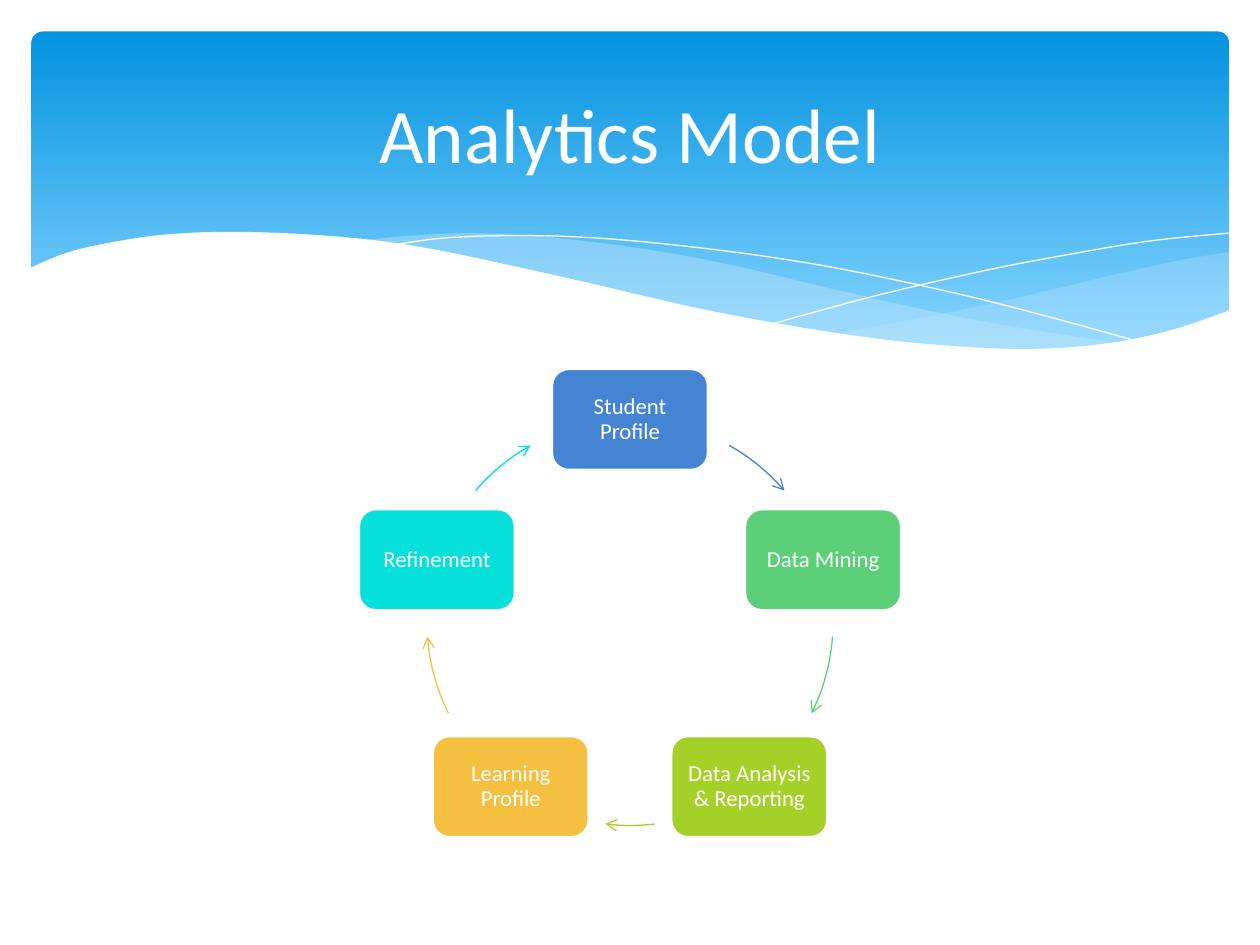
from math import cos, radians, sin

from lxml import etree
from pptx import Presentation
from pptx.dml.color import RGBColor
from pptx.enum.shapes import MSO_SHAPE
from pptx.enum.text import MSO_ANCHOR, PP_ALIGN
from pptx.oxml.ns import qn
from pptx.util import Pt

COLORS = {
    "white": "FFFFFF", "sky_top": "0293E0", "sky_bottom": "83D3FE", "mist": "C6E7FC",
    "blue": "4584D3", "green": "5BD078", "lime": "A5D028", "gold": "F5C040", "cyan": "05E0DB",
}
FONT = "Calibri"
TITLE = "Analytics Model"
STAGES = [
    ("Student Profile", "blue", (29.3, 49.5)),
    ("Data Mining", "green", (94, 116.6)),
    ("Data Analysis & Reporting", "lime", (173, 187)),
    ("Learning Profile", "gold", (243.4, 266)),
    ("Refinement", "cyan", (310.5, 330.7)),
]
CENTER_X, CENTER_Y, RADIUS = 360, 355.7, 116
BOX_WIDTH, BOX_HEIGHT = 89, 57.6

RIGHT_WAVE = [
    [(476, 190.8), (525, 182), (579.6, 170.6), (630.7, 158.4), (673, 149), (702.7, 144)],
    [(702.7, 177.8), (668, 189.4), (628, 197.3), (586, 200), (536.4, 198), (476, 190.8)],
]
LEFT_WAVE = [
    [(206, 137.5), (236, 134.6), (273.6, 133.2), (318, 136), (370, 142.6), (420.5, 152),
     (481, 166.3), (558, 183), (643, 196.6)],
    [(643, 196.6), (610.6, 199.4), (556.6, 199.4), (489.6, 193), (420.5, 181.4),
     (323, 160), (276, 149), (246, 143.3), (206, 137.5)],
]
FALLING_LINE = [(222.5, 140.4), (254, 136), (299.5, 134.6), (352, 136.8), (419, 144),
                (479, 153.4), (547, 167.8), (598, 180.7), (653, 195.8)]
RISING_LINE = [(441.4, 185), (500.4, 169), (558.7, 155.5), (602, 147), (655, 138), (702, 133.2)]
WHITE_WAVE = [
    [(16.6, 153.4), (37.4, 144.7), (61, 139), (95, 134), (139, 132.5), (195, 135.4),
     (245, 142), (322, 158.4), (400, 176.4), (467, 188.6), (523, 196), (582.5, 199.4),
     (630, 196.6), (669.6, 188.6), (703.4, 177)],
    [(703.4, 237), (16.6, 237)],
]


def color(name):
    return RGBColor.from_string(COLORS[name])


def smooth(knots, steps=8):
    if len(knots) < 3:
        return knots
    padded = [knots[0], *knots, knots[-1]]
    curve = []
    for before, start, end, after in zip(padded, padded[1:], padded[2:], padded[3:]):
        for step in range(steps):
            t = step / steps
            curve.append(tuple(
                b + ((c - a) * t + (2 * a - 5 * b + 4 * c - d) * t ** 2
                     + (3 * b - a - 3 * c + d) * t ** 3) / 2
                for a, b, c, d in zip(before, start, end, after)))
    return curve + [knots[-1]]


def on_circle(angle):
    return (CENTER_X + RADIUS * sin(radians(angle)), CENTER_Y - RADIUS * cos(radians(angle)))


def add_outline(slide, points, closed):
    vertices = [(Pt(x), Pt(y)) for x, y in points]
    builder = slide.shapes.build_freeform(*vertices[0])
    builder.add_line_segments(vertices[1:], close=closed)
    shape = builder.convert_to_shape()
    shape.shadow.inherit = False
    return shape


def add_wave(slide, edges, fill, opacity=100):
    shape = add_outline(slide, [point for edge in edges for point in smooth(edge)], True)
    shape.line.fill.background()
    shape.fill.solid()
    shape.fill.fore_color.rgb = color(fill)
    if opacity < 100:
        rgb = shape.fill._xPr.find(f".//{qn('a:srgbClr')}")
        etree.SubElement(rgb, qn("a:alpha"), val=str(opacity * 1000))


def add_curve(slide, points, stroke, width, arrow=False):
    shape = add_outline(slide, points, False)
    shape.fill.background()
    shape.line.color.rgb = color(stroke)
    shape.line.width = Pt(width)
    if arrow:
        etree.SubElement(shape.line._get_or_add_ln(), qn("a:tailEnd"), type="arrow")


def format_text(text_frame, size):
    text_frame.word_wrap = True
    text_frame.vertical_anchor = MSO_ANCHOR.MIDDLE
    paragraph = text_frame.paragraphs[0]
    paragraph.alignment = PP_ALIGN.CENTER
    font = paragraph.runs[0].font
    font.name, font.size, font.color.rgb = FONT, Pt(size), color("white")
    return paragraph


def add_sky(slide):
    sky = slide.shapes.add_shape(
        MSO_SHAPE.ROUNDED_RECTANGLE, Pt(18), Pt(18), Pt(684.5), Pt(194.4))
    sky.adjustments[0] = 0.034
    sky.shadow.inherit = False
    sky.line.fill.background()
    sky.fill.gradient()
    sky.fill.gradient_angle = 270
    stops = zip(sky.fill.gradient_stops, (0, 0.9), ("sky_top", "sky_bottom"))
    for stop, position, name in stops:
        stop.position = position
        stop.color.rgb = color(name)


def add_stage(slide, label, fill, angle):
    x, y = on_circle(angle)
    box = slide.shapes.add_shape(
        MSO_SHAPE.ROUNDED_RECTANGLE, Pt(x - BOX_WIDTH / 2), Pt(y - BOX_HEIGHT / 2),
        Pt(BOX_WIDTH), Pt(BOX_HEIGHT))
    box.shadow.inherit = False
    box.fill.solid()
    box.fill.fore_color.rgb = color(fill)
    box.line.color.rgb = color("white")
    box.line.width = Pt(1.25)
    frame = box.text_frame
    frame.text = label
    frame.margin_left = frame.margin_right = frame.margin_top = frame.margin_bottom = Pt(3.6)
    format_text(frame, 13).line_spacing = 0.9


def main():
    """Build the analytics model slide: a wave banner above a five-stage cycle."""
    presentation = Presentation()
    presentation.slide_width, presentation.slide_height = Pt(720), Pt(540)
    slide = presentation.slides.add_slide(presentation.slide_layouts[5])

    add_sky(slide)
    add_wave(slide, RIGHT_WAVE, "mist", 29)
    add_wave(slide, LEFT_WAVE, "mist", 40)
    for line in (FALLING_LINE, RISING_LINE):
        add_curve(slide, smooth(line), "white", 0)
    add_wave(slide, WHITE_WAVE, "white")

    for index, (label, fill, (start, end)) in enumerate(STAGES):
        add_stage(slide, label, fill, index * 360 / len(STAGES))
        arc = [on_circle(start + (end - start) * step / 12) for step in range(13)]
        add_curve(slide, arc, fill, 0.75, arrow=True)

    title = slide.shapes.title
    title.left, title.top, title.width, title.height = Pt(36), Pt(26.6), Pt(648), Pt(98.6)
    title.text_frame.text = TITLE
    format_text(title.text_frame, 44)
    title.element.getparent().append(title.element)
    presentation.save("out.pptx")


if __name__ == "__main__":
    main()
